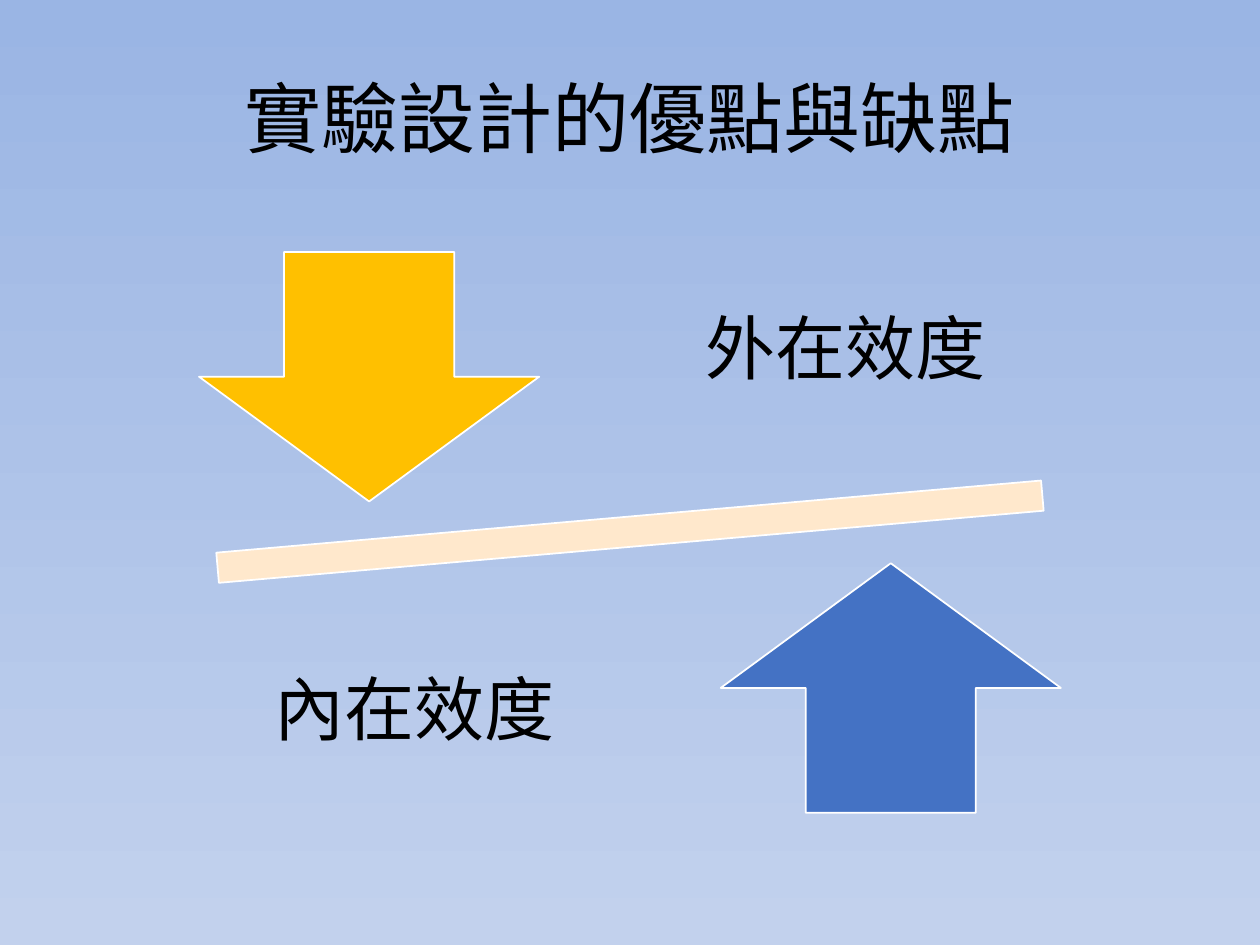
"""Build the slide on the strengths and weaknesses of experimental design."""
from lxml import etree
from pptx import Presentation
from pptx.dml.color import RGBColor
from pptx.enum.shapes import MSO_SHAPE
from pptx.enum.text import MSO_ANCHOR, PP_ALIGN
from pptx.oxml.ns import qn
from pptx.util import Inches, Pt

MINUS = MSO_SHAPE.MATH_MINUS
DOWN = MSO_SHAPE.DOWN_ARROW
UP = MSO_SHAPE.UP_ARROW
MIDDLE = MSO_ANCHOR.MIDDLE
CENTER = PP_ALIGN.CENTER

FONT = "Noto Sans CJK SC"
BLACK = RGBColor(0x00, 0x00, 0x00)
WHITE = RGBColor(0xFF, 0xFF, 0xFF)
CREAM = RGBColor(0xFF, 0xE8, 0xCC)
GOLD = RGBColor(0xFF, 0xC0, 0x00)
BLUE = RGBColor(0x44, 0x72, 0xC4)
SKY_TOP = RGBColor(0x9A, 0xB5, 0xE4)
SKY_BOTTOM = RGBColor(0xC2, 0xD1, 0xED)


def write_text(box, text, size):
    frame = box.text_frame
    frame.text = text
    frame.word_wrap = True
    frame.vertical_anchor = MIDDLE
    para = frame.paragraphs[0]
    para.alignment = CENTER
    span = para.runs[0]
    span.font.size = Pt(size)
    span.font.color.rgb = BLACK
    span.font.name = FONT
    etree.SubElement(span.font._element, qn("a:ea"), typeface=FONT)
    return frame


deck = Presentation()
deck.slide_width = Inches(10)
deck.slide_height = Inches(7.5)
page = deck.slides.add_slide(deck.slide_layouts[5])

sky = page.background.fill
sky.gradient()
sky.gradient_angle = 270
for stop, color in zip(sky.gradient_stops, (SKY_TOP, SKY_BOTTOM)):
    stop.color.rgb = color
sky.gradient_stops[0].position = 0
sky.gradient_stops[1].position = 1

title = page.shapes.title
title.left, title.top = Inches(0.5), Inches(0.3)
title.width, title.height = Inches(9), Inches(1.25)
write_text(title, "實驗設計的優點與缺點", 44)

seesaw_parts = [
    (MINUS, 0.53, 3.71, 8.94, 1.02, 355, CREAM),
    (DOWN, 1.58, 2, 2.7, 1.98, 0, GOLD),
    (UP, 5.72, 4.47, 2.7, 1.98, 0, BLUE),
]
for kind, left, top, width, height, angle, color in seesaw_parts:
    part = page.shapes.add_shape(
        kind, Inches(left), Inches(top), Inches(width), Inches(height)
    )
    part.rotation = angle
    part.shadow.inherit = False
    part.fill.solid()
    part.fill.fore_color.rgb = color
    part.line.color.rgb = WHITE
    part.line.width = Pt(1)

for text, left, top in [("外在效度", 5.27, 1.75), ("內在效度", 1.85, 4.62)]:
    label = page.shapes.add_textbox(
        Inches(left), Inches(top), Inches(2.88), Inches(2.08)
    )
    frame = write_text(label, text, 40)
    frame.margin_left = frame.margin_right = Inches(0.31)
    frame.margin_top = frame.margin_bottom = Inches(0.31)
    frame.paragraphs[0].line_spacing = 0.9
    frame.paragraphs[0].space_after = Pt(14)

deck.save("out.pptx")
